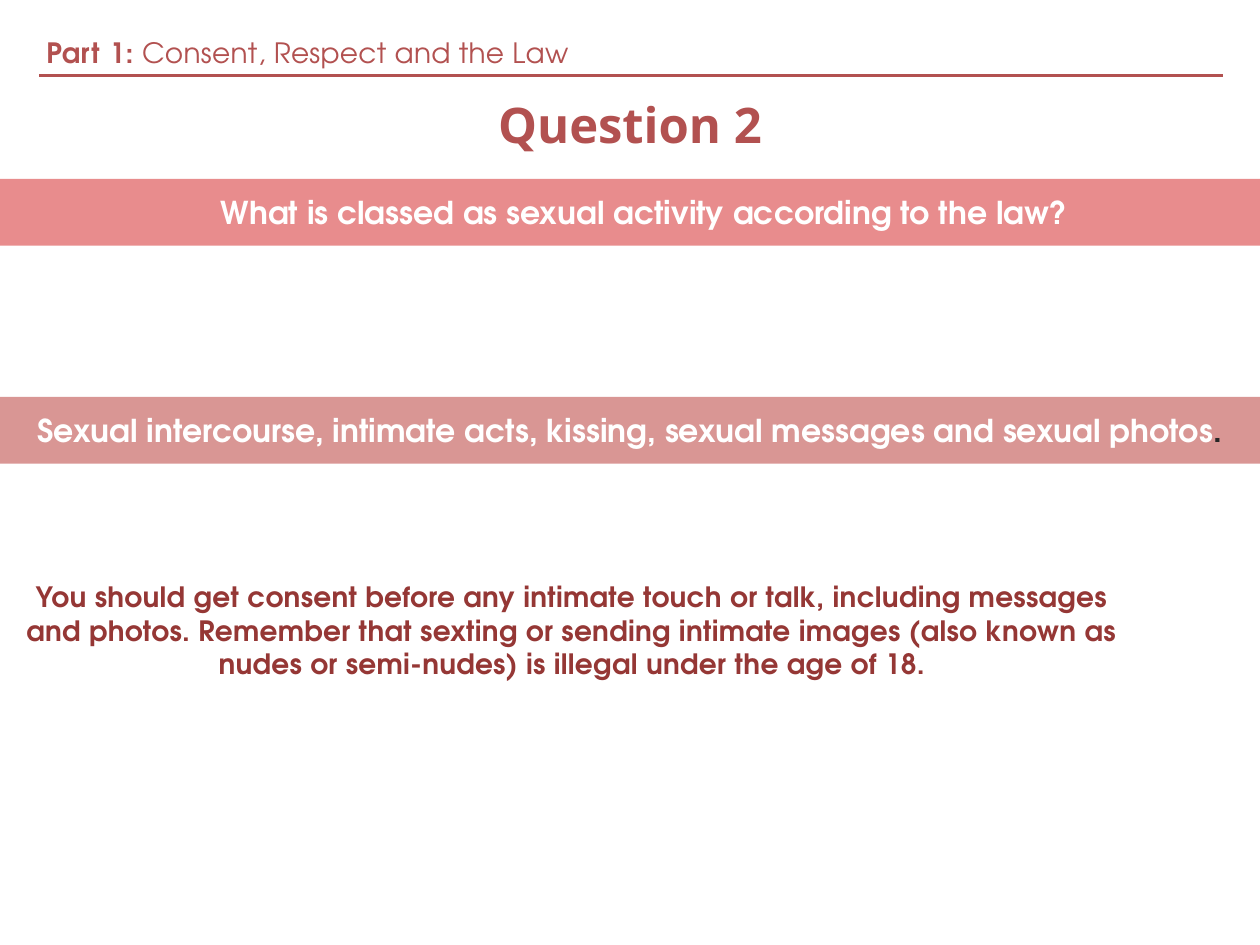
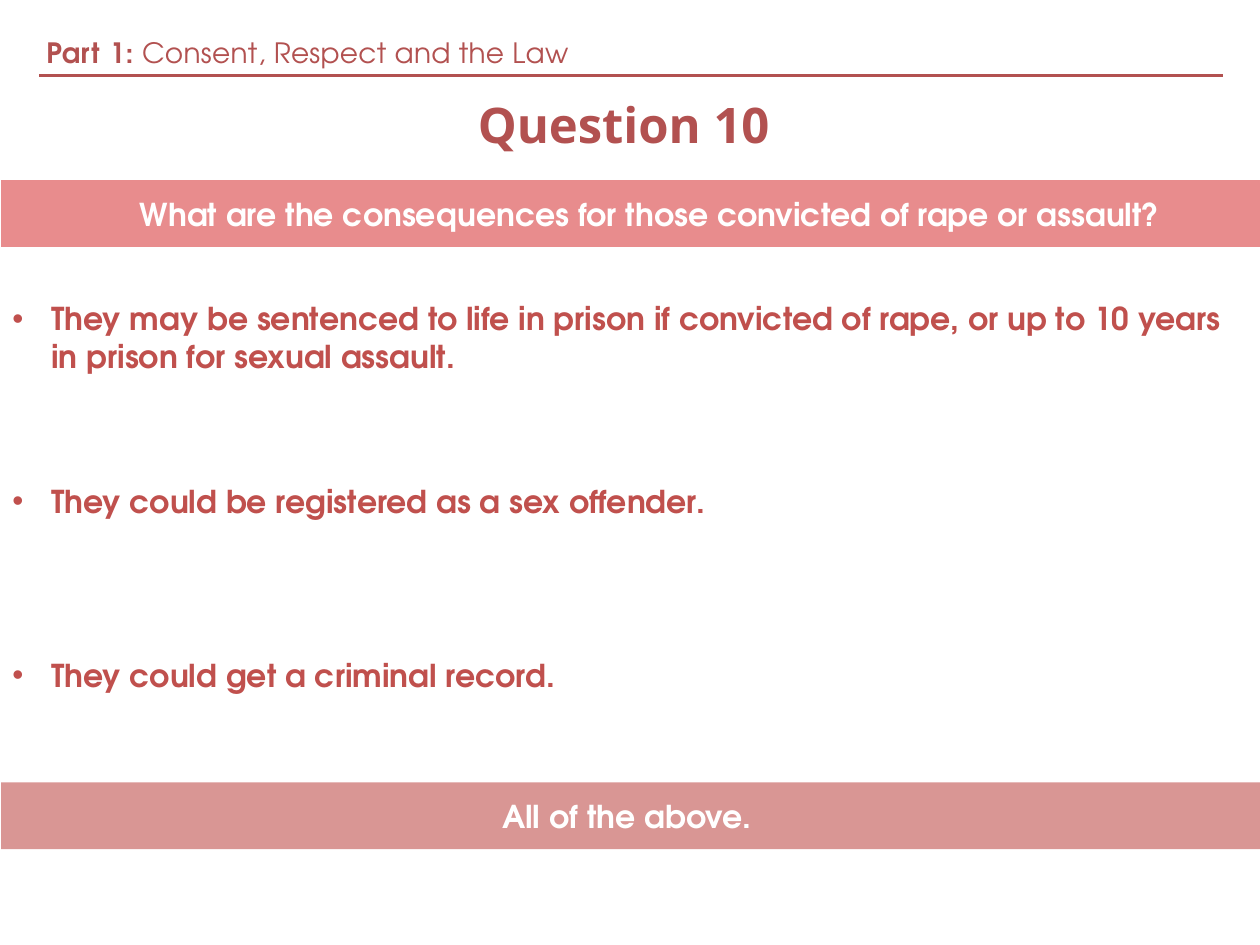
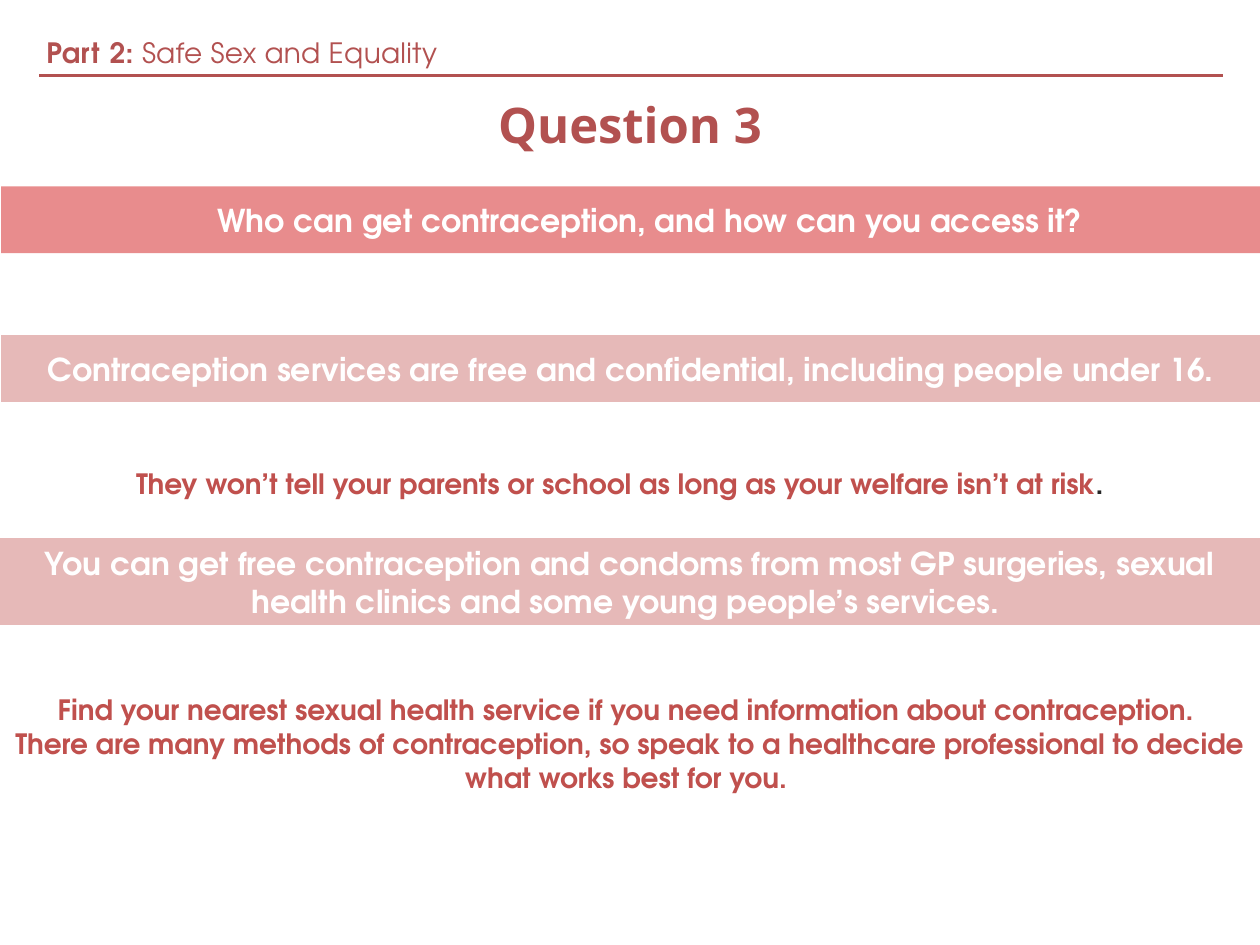
from pptx import Presentation
from pptx.dml.color import RGBColor
from pptx.enum import shapes, text
from pptx.oxml import parse_xml
from pptx.oxml.ns import nsdecls, qn
from pptx.util import Inches, Pt
from lxml import etree

COLORS = {
    "heading": "B25150", "question": "D94041", "answer": "D99694", "pale": "E6B9B8",
    "body": "C0504D", "dark": "953735", "stop": "262626", "white": "FFFFFF",
}
BODY_FONT, TITLE_FONT = "TeX Gyre Adventor", "Open Sans"
WIDTH, HEIGHT = 10, 7.5
BAND_HEIGHT, TALL_HEIGHT = 0.53, 0.69
BULLET_INDENT = 0.31
LAW = "Consent, Respect and the Law"

# Bands are (kind, left, top, height, runs), bullets (top, height, text) and
# notes (box, color, spacing, paragraphs); a run is (text, color or None).
SLIDES = [
    {
        "part": ("1", LAW),
        "title": "Question 2",
        "bands": [
            ("question", 0, 1.42, BAND_HEIGHT,
             [("What is classed as sexual activity according to the law? ", None)]),
            ("answer", 0, 3.15, BAND_HEIGHT,
             [("Sexual intercourse, intimate acts, kissing, sexual messages and sexual photos", None),
              (".", "stop")]),
        ],
        "notes": [
            ((0, 4.55, 9.09, 0.91), "dark", 0.2,
             [[("You should get consent before any intimate touch or talk, including messages "
                "and photos. Remember that sexting or sending intimate images (also known as "
                "nudes or semi-nudes) is illegal under the age of 18.", None)]]),
        ],
    },
    {
        "part": ("1", LAW),
        "title": "Question 10 ",
        "bands": [
            ("question", 0.01, 1.43, BAND_HEIGHT,
             [("What are the consequences for those convicted of rape or assault?", None)]),
            ("answer", 0.01, 6.21, BAND_HEIGHT, [("All of the above. ", None)]),
        ],
        "bullets": [
            (2.33, TALL_HEIGHT, "They may be sentenced to life in prison if convicted of rape, "
                                "or up to 10 years in prison for sexual assault."),
            (3.71, BAND_HEIGHT, "They could be registered as a sex offender."),
            (5.09, BAND_HEIGHT, "They could get a criminal record."),
        ],
    },
    {
        "part": ("2", "Safe Sex and Equality"),
        "title": "Question 3",
        "bands": [
            ("question", 0.01, 1.48, BAND_HEIGHT,
             [("Who can get contraception, and how can you access it?", None)]),
            ("pale", 0.01, 2.66, BAND_HEIGHT,
             [("Contraception services are free and confidential, including people under 16.", None)]),
            ("pale", 0, 4.27, TALL_HEIGHT,
             [("You can get free contraception and condoms from most GP surgeries, sexual "
               "health clinics and some young people’s services. ", None)]),
        ],
        "notes": [
            ((0.31, 3.65, 9.28, 0.37), "body", 0,
             [[("They won’t tell your parents or school as long as your welfare isn’t at risk", None),
               (". ", "stop")]]),
            ((0, 5.45, 10, 0.91), "body", 0,
             [[("Find your nearest sexual health service if you need information about "
                "contraception. ", None)],
              [("There are many methods of contraception, so speak to a healthcare "
                "professional to decide what works best for you. ", None)]]),
        ],
    },
]


def rgb(name):
    return RGBColor.from_string(COLORS[name])


def add_run(paragraph, words, size, color, bold=True, spacing=0, font=BODY_FONT):
    run = paragraph.add_run()
    run.text = words
    run.font.name, run.font.size, run.font.bold = font, Pt(size), bold
    run.font.color.rgb = rgb(color)
    if spacing:
        run.font._element.set("spc", str(round(spacing * 100)))


def add_text_box(slide, left, top, width, height, anchor=text.MSO_ANCHOR.TOP):
    box = slide.shapes.add_textbox(*map(Inches, (left, top, width, height)))
    box.text_frame.word_wrap = True
    box.text_frame.vertical_anchor = anchor
    return box.text_frame


def add_header(slide, part, title):
    """Part line, rule and slide title that every slide carries."""
    number, topic = part
    paragraph = add_text_box(slide, 0.27, 0.23, 9.73, 0.31).paragraphs[0]
    for words, spacing in (("Pa", 0.2), ("rt", 0.9), (f" {number}: ", 0.2)):
        add_run(paragraph, words, 16, "heading", spacing=spacing)
    add_run(paragraph, topic, 16, "heading", bold=False, spacing=0.2)

    rule = slide.shapes.add_connector(
        shapes.MSO_CONNECTOR.STRAIGHT, *map(Inches, (0.31, 0.6, 9.71, 0.6)))
    rule.line.color.rgb = rgb("heading")
    rule.line.width = Pt(1.5)
    etree.SubElement(rule._element.spPr, qn("a:effectLst"))

    paragraph = add_text_box(slide, 0, 0.7, WIDTH, 0.56).paragraphs[0]
    paragraph.alignment = text.PP_ALIGN.CENTER
    add_run(paragraph, title, 28, "heading", font=TITLE_FONT)


def add_band(slide, kind, left, top, height, runs):
    band = slide.shapes.add_shape(
        shapes.MSO_SHAPE.RECTANGLE, *map(Inches, (left, top, WIDTH, height)))
    band.shadow.inherit = False
    band.line.fill.background()
    band.fill.solid()
    band.fill.fore_color.rgb = rgb(kind)
    band.text_frame.word_wrap = True
    band.text_frame.vertical_anchor = text.MSO_ANCHOR.MIDDLE
    paragraph = band.text_frame.paragraphs[0]
    paragraph.alignment = text.PP_ALIGN.CENTER
    if kind == "question":
        color = band._element.spPr.find(f".//{qn('a:srgbClr')}")
        etree.SubElement(color, qn("a:alpha"), val="60000")
        paragraph._p.get_or_add_pPr().set("marL", str(Inches(0.3)))
    for words, color in runs:
        add_run(paragraph, words, 18, color or "white")


def add_bullet(slide, top, height, words):
    frame = add_text_box(slide, 0, top, WIDTH, height, text.MSO_ANCHOR.MIDDLE)
    paragraph = frame.paragraphs[0]
    properties = paragraph._p.get_or_add_pPr()
    properties.set("marL", str(Inches(BULLET_INDENT)))
    properties.set("indent", str(-Inches(BULLET_INDENT)))
    properties.append(parse_xml(f'<a:buFont {nsdecls("a")} typeface="Arial"/>'))
    properties.append(parse_xml(f'<a:buChar {nsdecls("a")} char="•"/>'))
    add_run(paragraph, words, 18, "body")


def add_note(slide, box, color, spacing, paragraphs):
    frame = add_text_box(slide, *box)
    for index, runs in enumerate(paragraphs):
        paragraph = frame.add_paragraph() if index else frame.paragraphs[0]
        paragraph.alignment = text.PP_ALIGN.CENTER
        for words, run_color in runs:
            add_run(paragraph, words, 16, run_color or color, spacing=spacing)


def main():
    presentation = Presentation()
    presentation.slide_width, presentation.slide_height = Inches(WIDTH), Inches(HEIGHT)
    for content in SLIDES:
        slide = presentation.slides.add_slide(presentation.slide_layouts[6])
        add_header(slide, content["part"], content["title"])
        for band in content["bands"]:
            add_band(slide, *band)
        for bullet in content.get("bullets", []):
            add_bullet(slide, *bullet)
        for note in content.get("notes", []):
            add_note(slide, *note)
    presentation.save("out.pptx")


if __name__ == "__main__":
    main()
